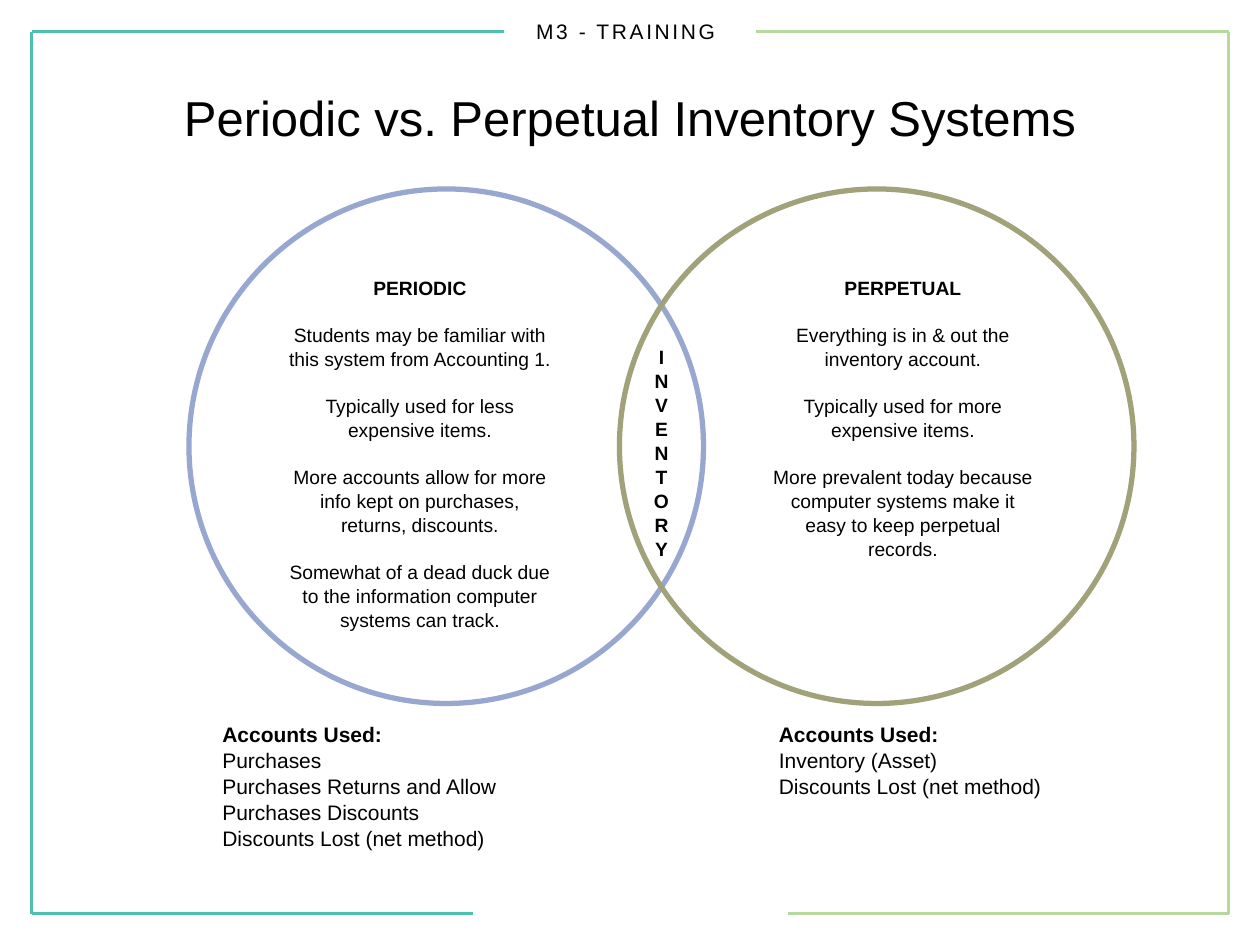
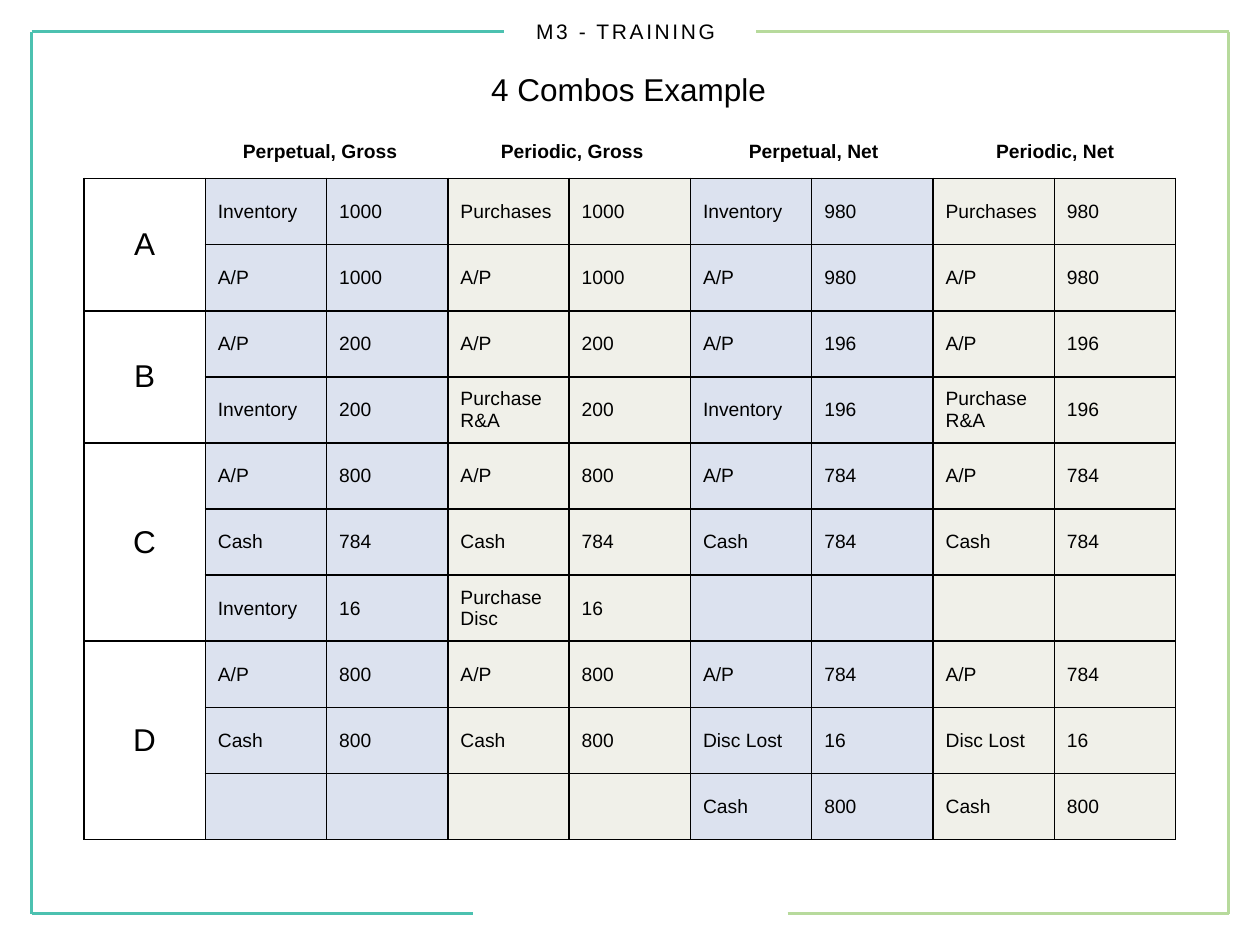
import dataclasses
import typing

import pptx
import pptx.dml.color
import pptx.enum.shapes
import pptx.enum.text
import pptx.oxml.ns
import pptx.slide
import pptx.table
import pptx.text.text
import pptx.util
from lxml import etree

RGB = pptx.dml.color.RGBColor
ALIGN = pptx.enum.text.PP_ALIGN
ANCHOR = pptx.enum.text.MSO_ANCHOR

# Shared look: 120 px to the inch
SCALE = 914400 // 120
FONT = "Arial"
BLACK = RGB(0x00, 0x00, 0x00)
WHITE = RGB(0xFF, 0xFF, 0xFF)
TEAL = RGB(0x4C, 0xC1, 0xB0)
GREEN = RGB(0xB7, 0xDA, 0x9C)
BLUE = RGB(0x97, 0xA7, 0xD0)
OLIVE = RGB(0xA1, 0xA1, 0x7A)
PALE_BLUE = RGB(0xDC, 0xE2, 0xEF)
PALE_OLIVE = RGB(0xF0, 0xF0, 0xE9)


@dataclasses.dataclass(frozen=True)
class Line:
    x1: int
    y1: int
    x2: int
    y2: int
    color: RGB


@dataclasses.dataclass(frozen=True)
class Label:
    x: int
    y: int
    w: int
    h: int
    lines: tuple[str, ...]
    size: int = 11
    align: ALIGN = ALIGN.CENTER
    anchor: ANCHOR = ANCHOR.TOP
    head: bool = False  # first line is bold
    bold: bool = False  # every line is bold
    gap: float = 0  # points before each later paragraph
    pitch: float = 1.0
    wrap: bool = True
    track: int = 0  # letter spacing, hundredths of a point


@dataclasses.dataclass(frozen=True)
class Ring:
    x: int
    y: int
    size: int
    color: RGB


FRAME = (
    Line(30, 30, 30, 870, TEAL),
    Line(1170, 30, 1170, 870, GREEN),
    Line(30, 870, 450, 870, TEAL),
    Line(750, 870, 1170, 870, GREEN),
    Line(30, 30, 480, 30, TEAL),
    Line(720, 30, 1170, 30, GREEN),
)
BANNER = Label(0, 0, 1200, 60, ("M3 - TRAINING ",), 12, anchor=ANCHOR.MIDDLE, track=150)

# Venn slide
PITCH = 1.04
GAP = 13.2
RINGS = (Ring(180, 180, 490, BLUE), Ring(590, 180, 490, OLIVE))
VENN = (
    Label(200, 680, 360, 133,
          ("Accounts Used:", "Purchases", "Purchases Returns and Allow",
           "Purchases Discounts", "Discounts Lost (net method)"),
          12, ALIGN.LEFT, head=True, pitch=PITCH),
    Label(730, 680, 360, 85,
          ("Accounts Used:", "Inventory (Asset)", "Discounts Lost (net method)"),
          12, ALIGN.LEFT, head=True, pitch=PITCH),
    Label(60, 36, 1080, 150, ("Periodic vs. Perpetual Inventory Systems",), 28,
          anchor=ANCHOR.MIDDLE),
    Label(260, 256, 280, 346,
          ("PERIODIC",
           "Students may be familiar with this system from Accounting 1.",
           "Typically used for less expensive items.",
           "More accounts allow for more info kept on purchases, returns, discounts.",
           "Somewhat of a dead duck due to the information computer systems can track."),
          head=True, gap=GAP, pitch=PITCH),
    Label(720, 256, 280, 278,
          ("PERPETUAL",
           "Everything is in & out the inventory account.",
           "Typically used for more expensive items.",
           "More prevalent today because computer systems make it easy to keep "
           "perpetual records."),
          head=True, gap=GAP, pitch=PITCH),
    Label(570, 322, 120, 212, tuple("INVENTORY"), bold=True, pitch=PITCH),
)

# Combos slide
TITLE = Label(456, 61, 288, 48, ("4 Combos Example",), 18, ALIGN.LEFT, wrap=False)
HEADS = ((190, "Perpetual, Gross"), (430, "Periodic, Gross"),
         (660, "Perpetual, Net"), (890, "Periodic, Net"))
GROUPS = {
    "A": (("Inventory", "1000", "Purchases", "1000", "Inventory", "980", "Purchases", "980"),
          ("A/P", "1000", "A/P", "1000", "A/P", "980", "A/P", "980")),
    "B": (("A/P", "200", "A/P", "200", "A/P", "196", "A/P", "196"),
          ("Inventory", "200", "Purchase\vR&A", "200",
           "Inventory", "196", "Purchase\vR&A", "196")),
    "C": (("A/P", "800", "A/P", "800", "A/P", "784", "A/P", "784"),
          ("Cash", "784", "Cash", "784", "Cash", "784", "Cash", "784"),
          ("Inventory", "16", "Purchase\vDisc", "16", "", "", "", "")),
    "D": (("A/P", "800", "A/P", "800", "A/P", "784", "A/P", "784"),
          ("Cash", "800", "Cash", "800", "Disc Lost", "16", "Disc Lost", "16"),
          ("", "", "", "", "Cash", "800", "Cash", "800")),
}


def px(*nums: int) -> list[pptx.util.Emu]:
    return [pptx.util.Emu(num * SCALE) for num in nums]


def style(para: pptx.text.text._Paragraph, size: int, align: ALIGN, bold: bool = False) -> None:
    para.alignment = align
    for font in [para.font] + [run.font for run in para.runs]:
        font.name, font.size, font.bold = FONT, pptx.util.Pt(size), bold
        font.color.rgb = BLACK


def draw_line(slide: pptx.slide.Slide, line: Line) -> None:
    bar = slide.shapes.add_connector(
        pptx.enum.shapes.MSO_CONNECTOR.STRAIGHT, *px(line.x1, line.y1, line.x2, line.y2))
    bar.line.color.rgb = line.color
    bar.line.width = pptx.util.Pt(2.25)
    etree.SubElement(bar._element.spPr, pptx.oxml.ns.qn("a:effectLst"))


def draw_label(slide: pptx.slide.Slide, label: Label) -> None:
    frame = slide.shapes.add_textbox(*px(label.x, label.y, label.w, label.h)).text_frame
    frame.word_wrap = label.wrap
    frame.vertical_anchor = label.anchor
    frame.text = "\n".join(label.lines)
    for num, para in enumerate(frame.paragraphs):
        style(para, label.size, label.align, label.bold or (label.head and num == 0))
        if label.pitch != 1:
            para.line_spacing = label.pitch
        if num and label.gap:
            para.space_before = pptx.util.Pt(label.gap)
        if label.track:
            for run in para.runs:
                run.font._element.set("spc", str(label.track))


def draw_ring(slide: pptx.slide.Slide, ring: Ring) -> None:
    oval = slide.shapes.add_shape(
        pptx.enum.shapes.MSO_SHAPE.OVAL, *px(ring.x, ring.y, ring.size, ring.size))
    oval.shadow.inherit = False
    oval.fill.background()
    oval.line.color.rgb = ring.color
    oval.line.width = pptx.util.Pt(3)


def set_edges(cell: pptx.table._Cell, top: float, base: float) -> None:
    props = cell._tc.get_or_add_tcPr()
    for side, width in (("L", 1), ("R", 1), ("T", top), ("B", base)):
        edge = etree.SubElement(props, pptx.oxml.ns.qn("a:ln" + side),
                                w=str(pptx.util.Pt(width)))
        fill = etree.SubElement(edge, pptx.oxml.ns.qn("a:solidFill"))
        etree.SubElement(fill, pptx.oxml.ns.qn("a:srgbClr"), val=str(BLACK))


def fill_cell(cell: pptx.table._Cell, text: str, size: int, align: ALIGN, color: RGB) -> None:
    cell.fill.solid()
    cell.fill.fore_color.rgb = color
    cell.vertical_anchor = ANCHOR.MIDDLE
    cell.text_frame.text = text
    style(cell.text_frame.paragraphs[0], size, align)


def draw_table(slide: pptx.slide.Slide) -> None:
    count = sum(len(rows) for rows in GROUPS.values())
    table = slide.shapes.add_table(count, 9, *px(80, 170, 1040, 630)).table
    table.first_row = table.horz_banding = False
    first = 0
    for name, rows in GROUPS.items():
        last = first + len(rows) - 1
        for num, texts in enumerate(rows, first):
            # Heavier rules part the groups
            top = 1.5 if num == first and num > 0 else 1
            base = 1.5 if num == last and num < count - 1 else 1
            for col, text in enumerate(("",) + texts):
                cell = table.cell(num, col)
                set_edges(cell, top, base)
                if col:
                    tint = PALE_BLUE if (col - 1) // 2 % 2 == 0 else PALE_OLIVE
                    fill_cell(cell, text, 11, ALIGN.LEFT, tint)
        side = table.cell(first, 0)
        side.merge(table.cell(last, 0))
        fill_cell(side, name, 18, ALIGN.CENTER, WHITE)
        first = last + 1


def add_slide(deck: typing.Any) -> pptx.slide.Slide:
    slide = deck.slides.add_slide(deck.slide_layouts[6])
    for line in FRAME:
        draw_line(slide, line)
    draw_label(slide, BANNER)
    return slide


def main() -> None:
    deck = pptx.Presentation()
    deck.slide_width, deck.slide_height = px(1200, 900)

    # Periodic and perpetual compared
    venn = add_slide(deck)
    for ring in RINGS:
        draw_ring(venn, ring)
    for label in VENN:
        draw_label(venn, label)

    # Entries under the four combinations
    combos = add_slide(deck)
    for left, text in HEADS:
        draw_label(combos, Label(left, 126, 230, 35, (text,), bold=True, pitch=PITCH))
    draw_table(combos)
    draw_label(combos, TITLE)

    deck.save("out.pptx")


if __name__ == "__main__":
    main()
